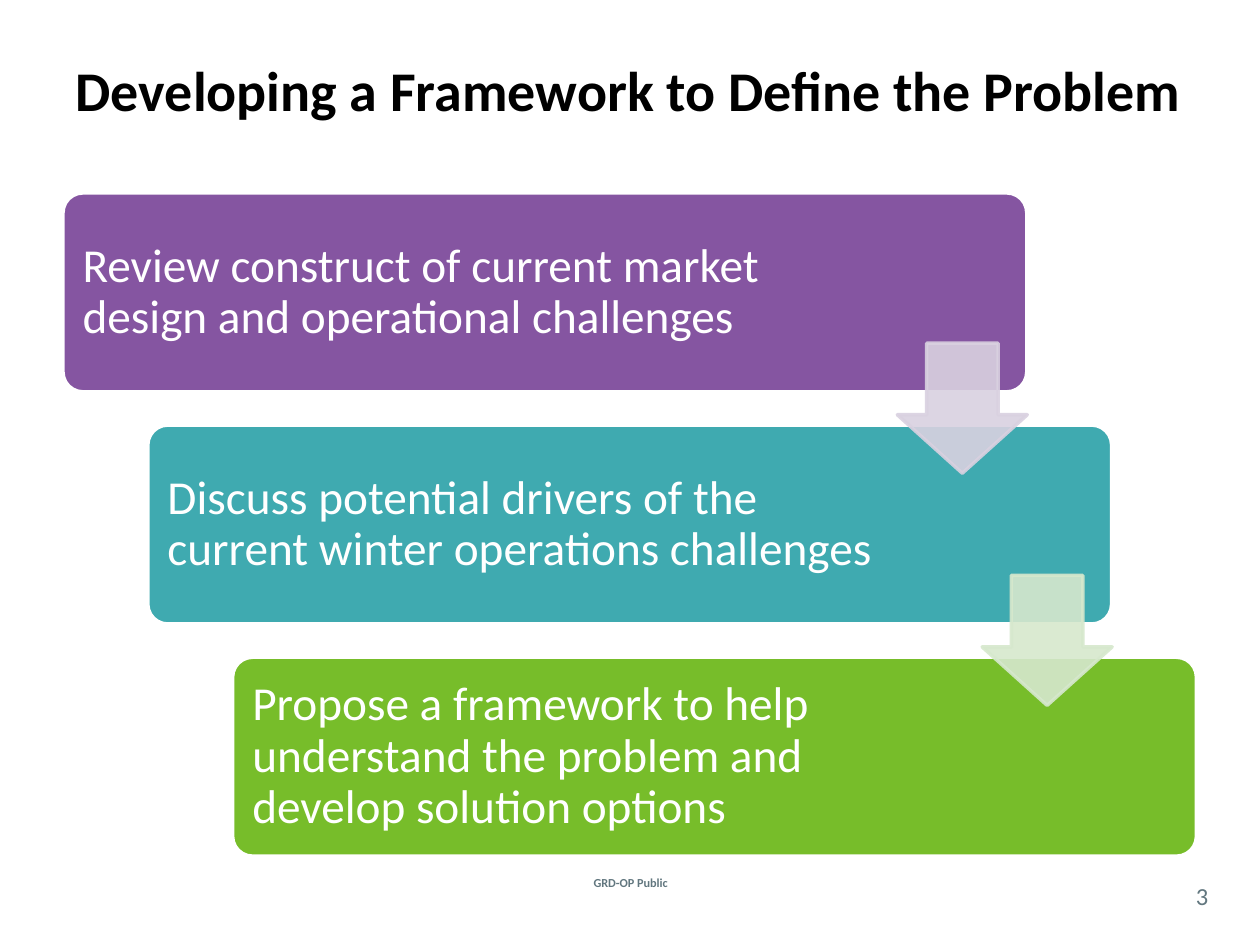
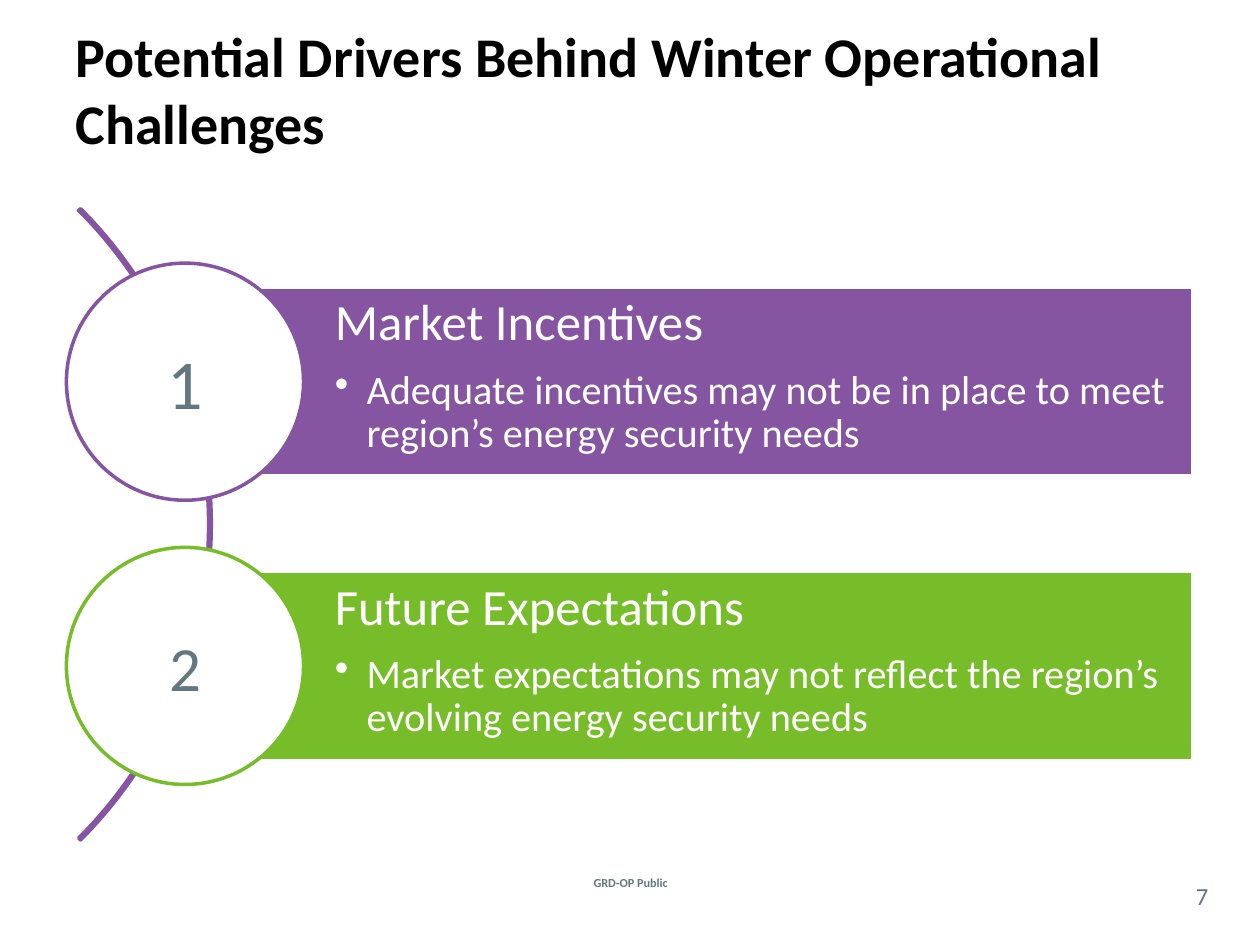
from lxml.etree import SubElement
from pptx import Presentation
from pptx.dml.color import RGBColor
from pptx.enum.shapes import MSO_SHAPE as Shape
from pptx.enum.text import MSO_ANCHOR as Anchor, MSO_AUTO_SIZE as AutoSize, PP_ALIGN as Align
from pptx.oxml.ns import qn
from pptx.util import Cm, Pt

FONT = "Calibri"
BLACK = RGBColor(0x00, 0x00, 0x00)
WHITE = RGBColor(0xFF, 0xFF, 0xFF)
SLATE = RGBColor(0x62, 0x77, 0x7F)
PURPLE = RGBColor(0x85, 0x55, 0xA1)
TEAL = RGBColor(0x3F, 0xAA, 0xB0)
GREEN = RGBColor(0x77, 0xBD, 0x2A)
PALE_PURPLE = RGBColor(0xD9, 0xD1, 0xE0)
PALE_GREEN = RGBColor(0xD6, 0xE8, 0xCD)
TITLE_ONLY = 5


class Deck:
    """Holds the shared style and the slide being built."""

    def __init__(self):
        self.prs = Presentation()
        self.prs.slide_width, self.prs.slide_height = Cm(25.4), Cm(19.05)
        self.slide = None

    def new_slide(self, title, number, title_width):
        self.slide = self.prs.slides.add_slide(self.prs.slide_layouts[TITLE_ONLY])
        heading = self.slide.shapes.title
        heading.left, heading.top = Cm(1.27), Cm(0.2)
        heading.width, heading.height = Cm(title_width), Cm(3.18)
        self.set_text(heading, [title], 32, BLACK, bold=True)
        # Footer and page number
        self.label("GRD-OP Public", (10.85, 17.58, 3.73, 0.43), 7, bold=True)
        self.label(str(number), (23.7, 17.68, 1.07, 0.74), 14)

    def set_text(self, shape, lines, size, color, bold=False, align=Align.LEFT,
                 anchor=Anchor.MIDDLE, insets=None, spacing=None):
        frame = shape.text_frame
        frame.word_wrap = True
        frame.auto_size = AutoSize.NONE
        frame.vertical_anchor = anchor
        if insets is not None:
            (frame.margin_left, frame.margin_top,
             frame.margin_right, frame.margin_bottom) = map(Cm, insets)
        frame.text = "\n".join(lines)
        for paragraph in frame.paragraphs:
            paragraph.alignment = align
            if spacing:
                paragraph.line_spacing = spacing
            for run in paragraph.runs:
                self.style(run.font, size, color, bold)
        return frame

    def style(self, font, size, color, bold=False):
        font.name, font.size, font.bold = FONT, Pt(size), bold
        font.color.rgb = color

    def label(self, text, box, size, bold=False):
        field = self.slide.shapes.add_textbox(*map(Cm, box))
        self.set_text(field, [text], size, SLATE, bold, Align.CENTER, insets=(0, 0, 0, 0))

    def shape(self, kind, box, fill, line, adjustments=(), opacity=None):
        item = self.slide.shapes.add_shape(kind, *map(Cm, box))
        item.shadow.inherit = False
        for index, value in enumerate(adjustments):
            item.adjustments[index] = value
        if fill is None:
            item.fill.background()
        else:
            item.fill.solid()
            item.fill.fore_color.rgb = fill
        item.line.color.rgb = line
        item.line.width = Pt(2)
        if opacity:
            for color in item._element.spPr.iter(qn("a:srgbClr")):
                SubElement(color, qn("a:alpha"), val=str(opacity * 1000))
        return item

    def bullet(self, paragraph, indent):
        props = paragraph._p.get_or_add_pPr()
        props.set("marL", str(Cm(indent)))
        props.set("indent", str(-Cm(indent)))
        SubElement(props, qn("a:buChar"), char="•")

    def step(self, text, box, fill, right_inset):
        card = self.shape(Shape.ROUNDED_RECTANGLE, box, fill, WHITE, [0.1])
        self.set_text(card, [text], 27, WHITE, insets=(0.28, 0.28, right_inset, 0.28),
                      spacing=0.9)

    def arrow(self, box, color):
        self.shape(Shape.DOWN_ARROW, box, color, color, [0.55, 0.45], opacity=90)

    def driver(self, heading, detail, box, color):
        bar = self.shape(Shape.RECTANGLE, box, color, WHITE)
        frame = self.set_text(bar, [heading, detail], 29, WHITE, anchor=Anchor.TOP,
                              insets=(3.02, 0.2, 0.2, 0.2), spacing=0.9)
        head, point = frame.paragraphs
        head.space_after = Pt(10)
        point.level = 1
        self.bullet(point, 0.64)
        self.style(point.runs[0].font, 23, WHITE)

    def badge(self, text, center_x, center_y, diameter, color, size):
        box = (center_x - diameter / 2, center_y - diameter / 2, diameter, diameter)
        circle = self.shape(Shape.OVAL, box, WHITE, color)
        self.set_text(circle, [text], size, SLATE, align=Align.CENTER)


def framework_slide(deck):
    deck.new_slide("Developing a Framework to Define the Problem", 3, 23.29)
    shift_x, shift_y = 1.71, 4.68
    # Staircase of steps
    steps = [
        ("Review construct of current market design and operational challenges", PURPLE, 4.34),
        ("Discuss potential drivers of the current winter operations challenges", TEAL, 4.57),
        ("Propose a framework to help understand the problem and develop solution options",
         GREEN, 4.57),
    ]
    for i, (text, fill, right_inset) in enumerate(steps):
        deck.step(text, (1.27 + i * shift_x, 3.89 + i * shift_y, 19.43, 4.01), fill, right_inset)
    # Arrows between the steps
    for i, color in enumerate([PALE_PURPLE, PALE_GREEN]):
        deck.arrow((18.09 + i * shift_x, 6.92 + i * shift_y, 2.62, 2.62), color)


def drivers_slide(deck):
    deck.new_slide("Potential Drivers Behind Winter Operational Challenges", 7, 22.86)
    # Arc linking the drivers
    deck.shape(Shape.BLOCK_ARC, (-13.74, 1.57, 18, 18), None, PURPLE, [189, 27, 0.003])
    # Driver bars with numbered circles
    left, first_top, height, pitch = 3.73, 5.79, 3.81, 5.73
    drivers = [
        ("Market Incentives",
         "Adequate incentives may not be in place to meet region’s energy security needs",
         PURPLE, 40),
        ("Future Expectations",
         "Market expectations may not reflect the region’s evolving energy security needs",
         GREEN, 36),
    ]
    for i, (heading, detail, color, number_size) in enumerate(drivers):
        top = first_top + i * pitch
        deck.driver(heading, detail, (left, top, 20.32, height), color)
        deck.badge(str(i + 1), left, top + height / 2, 4.78, color, number_size)


def main():
    deck = Deck()
    framework_slide(deck)
    drivers_slide(deck)
    deck.prs.save("out.pptx")


if __name__ == "__main__":
    main()
